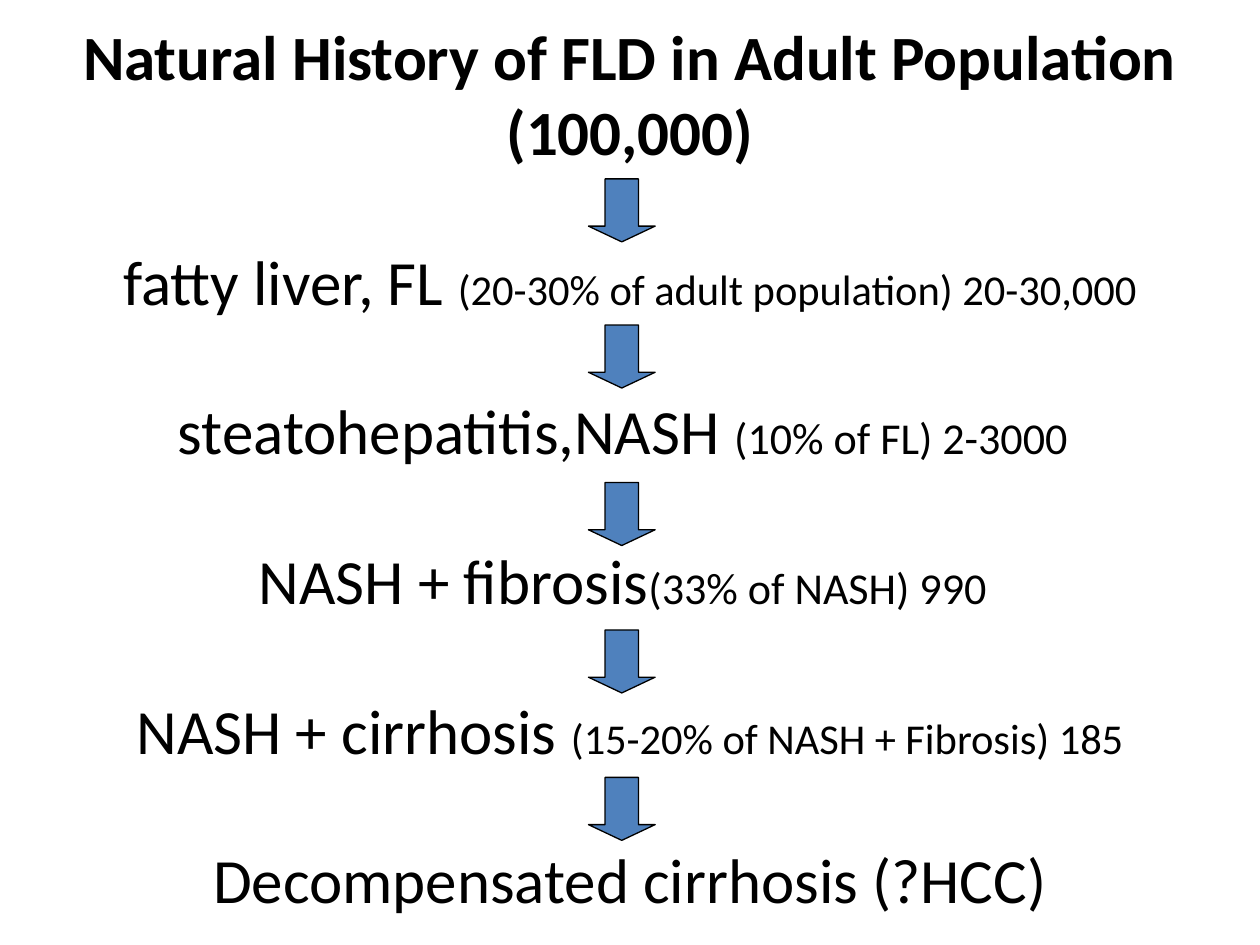
import pptx
import pptx.util
import pptx.dml.color
import pptx.enum.shapes
import pptx.enum.text

Inches = pptx.util.Inches
Pt = pptx.util.Pt
Color = pptx.dml.color.RGBColor.from_string

THEME = {
    "font": "Calibri",
    "text": "000000",
    "arrow": "4F81BD",
    "outline": "000000",
    "stage": 36,
    "detail": 25.2,
    "long_detail": 24.3,
    "stage_gap": 42.3,
}

HEADING = "Natural History of FLD in Adult Population (100,000)"
STAGES = [
    [("fatty liver, FL ", "stage"),
     ("(20-30% of adult population) 20-30,000", "long_detail")],
    [("steatohepatitis,NASH ", "stage"),
     ("(10% of FL) 2-3000", "detail"), (" ", "stage")],
    [("NASH + fibrosis", "stage"),
     ("(33% of NASH) 990", "detail"), (" ", "stage")],
    [("NASH + cirrhosis ", "stage"),
     ("(15-20% of NASH + Fibrosis) 185", "long_detail")],
    [("Decompensated cirrhosis (?HCC)", "stage")],
]
ARROW_TOPS = [1.42, 2.58, 3.83, 5, 6.17]
ARROW_LEFT, ARROW_WIDTH, ARROW_HEIGHT = 4.67, 0.53, 0.5


def add_line(paragraph, pieces, bold=False, gap=0):
    paragraph.alignment = pptx.enum.text.PP_ALIGN.CENTER
    paragraph.space_before = Pt(gap)
    for text, size in pieces:
        run = paragraph.add_run()
        run.text = text
        run.font.name = THEME["font"]
        run.font.size = Pt(THEME[size])
        run.font.bold = bold
        run.font.color.rgb = Color(THEME["text"])


def add_history(slide):
    title = slide.shapes.title
    title.left, title.top = Inches(0.25), Inches(-0.17)
    title.width, title.height = Inches(9.5), Inches(7.75)
    frame = title.text_frame
    frame.word_wrap = True
    frame.auto_size = pptx.enum.text.MSO_AUTO_SIZE.NONE
    frame.vertical_anchor = pptx.enum.text.MSO_ANCHOR.MIDDLE
    add_line(frame.paragraphs[0], [(HEADING, "stage")], bold=True)
    for pieces in STAGES:
        add_line(frame.add_paragraph(), pieces, gap=THEME["stage_gap"])


def add_arrow(slide, top):
    arrow = slide.shapes.add_shape(
        pptx.enum.shapes.MSO_SHAPE.DOWN_ARROW,
        Inches(ARROW_LEFT), Inches(top),
        Inches(ARROW_WIDTH), Inches(ARROW_HEIGHT))
    arrow.adjustments[0] = 0.5
    arrow.adjustments[1] = 0.25
    arrow.shadow.inherit = False
    arrow.fill.solid()
    arrow.fill.fore_color.rgb = Color(THEME["arrow"])
    arrow.line.color.rgb = Color(THEME["outline"])
    arrow.line.width = Pt(0.75)


def main():
    presentation = pptx.Presentation()
    presentation.slide_width = Inches(10)
    presentation.slide_height = Inches(7.5)
    slide = presentation.slides.add_slide(presentation.slide_layouts[5])
    add_history(slide)
    for top in ARROW_TOPS:
        add_arrow(slide, top)
    presentation.save("out.pptx")


if __name__ == "__main__":
    main()
